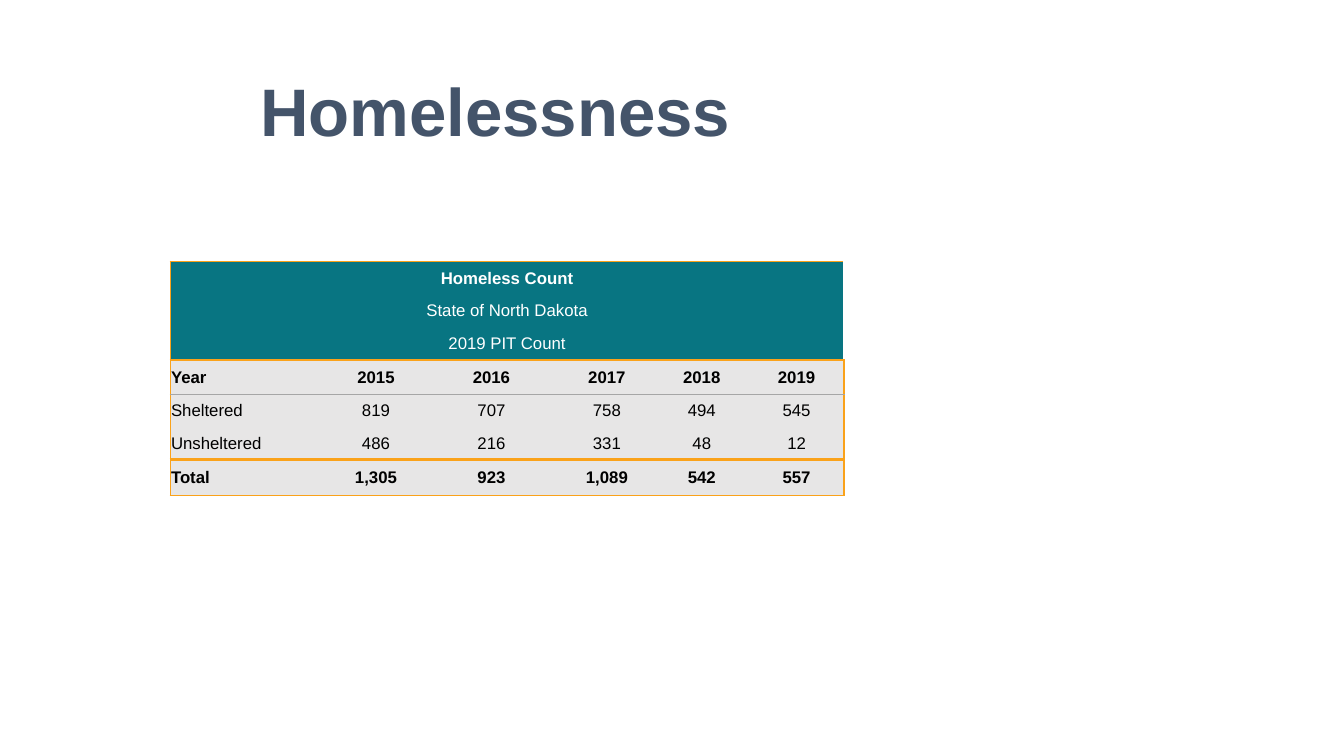
import pptx
import pptx.dml.color
import pptx.enum.text
import pptx.oxml.ns
import pptx.util
from lxml import etree
from pptx.util import Cm

COLOURS = {
    "title": "44546A",
    "header": "087582",
    "body": "E7E6E6",
    "white": "FFFFFF",
    "black": "000000",
    "orange": "FAA21A",
    "grey": "A6A6A6",
}
FONT = "Arial"

HEADINGS = ["Homeless Count", "State of North Dakota", "2019 PIT Count"]
COUNTS = [
    ["Year", "2015", "2016", "2017", "2018", "2019"],
    ["Sheltered", "819", "707", "758", "494", "545"],
    ["Unsheltered", "486", "216", "331", "48", "12"],
    ["Total", "1,305", "923", "1,089", "542", "557"],
]
BOLD_ROWS = {"Homeless Count", "Year", "Total"}

COLUMN_WIDTHS = [3.99, 2.39, 3.43, 2.39, 2.39, 2.39]
ROW_HEIGHTS = [0.84, 0.81, 0.84, 0.86, 0.81, 0.84, 0.91]

# Rules from the top of the table to its bottom: colour and width in points
OUTLINE = ("orange", 1)
ROW_RULES = [OUTLINE, None, None, ("orange", 1.5), ("grey", 0.75),
             None, ("orange", 2), OUTLINE]
COLUMN_RULES = [OUTLINE] + [None] * (len(COLUMN_WIDTHS) - 1) + [OUTLINE]


def colour(name):
    return pptx.dml.color.RGBColor.from_string(COLOURS[name])


def format_paragraph(para, size, colour_name, bold, centred=True):
    align = pptx.enum.text.PP_ALIGN
    para.alignment = align.CENTER if centred else align.LEFT
    for span in para.runs:
        span.font.name = FONT
        span.font.size = pptx.util.Pt(size)
        span.font.bold = bold
        span.font.color.rgb = colour(colour_name)


def add_title(page, text):
    box = page.shapes.add_textbox(Cm(0.71), Cm(0.84), Cm(23.55), Cm(17.65))
    frame = box.text_frame
    frame.word_wrap = True
    frame.margin_top = Cm(0.91)
    frame.text = text
    format_paragraph(frame.paragraphs[0], 48, "title", True)


def add_border(cell, side, rule):
    """Draw one side (L, R, T or B) of a cell; a rule of None hides it."""
    qn = pptx.oxml.ns.qn
    properties = cell._tc.get_or_add_tcPr()
    line = etree.SubElement(properties, qn(f"a:ln{side}"))
    if rule is None:
        etree.SubElement(line, qn("a:noFill"))
        return
    colour_name, width = rule
    line.set("w", str(int(pptx.util.Pt(width))))
    fill = etree.SubElement(line, qn("a:solidFill"))
    etree.SubElement(fill, qn("a:srgbClr"), val=COLOURS[colour_name])


def style_cell(cell, row, column, fill_name):
    add_border(cell, "L", COLUMN_RULES[column])
    add_border(cell, "R", COLUMN_RULES[column + 1])
    add_border(cell, "T", ROW_RULES[row])
    add_border(cell, "B", ROW_RULES[row + 1])
    cell.fill.solid()
    cell.fill.fore_color.rgb = colour(fill_name)
    cell.margin_left = cell.margin_right = cell.margin_top = Cm(0.02)
    cell.margin_bottom = 0
    cell.vertical_anchor = pptx.enum.text.MSO_ANCHOR.MIDDLE


def add_count_table(page):
    rows = [[heading] for heading in HEADINGS] + COUNTS
    last_column = len(COLUMN_WIDTHS) - 1
    frame = page.shapes.add_table(
        len(rows), len(COLUMN_WIDTHS), Cm(4.29), Cm(6.58),
        Cm(sum(COLUMN_WIDTHS)), Cm(sum(ROW_HEIGHTS)))
    table = frame.table
    table.horz_banding = False
    for column, width in zip(table.columns, COLUMN_WIDTHS):
        column.width = Cm(width)
    for row, height in zip(table.rows, ROW_HEIGHTS):
        row.height = Cm(height)

    for row, values in enumerate(rows):
        is_heading = len(values) == 1
        for column in range(len(COLUMN_WIDTHS)):
            style_cell(table.cell(row, column), row, column,
                       "header" if is_heading else "body")
        if is_heading:
            table.cell(row, 0).merge(table.cell(row, last_column))
            add_border_right = table.cell(row, 0)._tc.tcPr.find(
                pptx.oxml.ns.qn("a:lnR"))
            add_border_right.getparent().remove(add_border_right)
        for column, value in enumerate(values):
            cell = table.cell(row, column)
            cell.text_frame.text = value
            format_paragraph(
                cell.text_frame.paragraphs[0], 12,
                "white" if is_heading else "black",
                values[0] in BOLD_ROWS,
                centred=is_heading or column > 0)


def main():
    deck = pptx.Presentation()
    deck.slide_width = Cm(33.87)
    deck.slide_height = Cm(19.05)
    page = deck.slides.add_slide(deck.slide_layouts[6])
    add_title(page, "Homelessness")
    add_count_table(page)
    deck.save("out.pptx")


if __name__ == "__main__":
    main()
